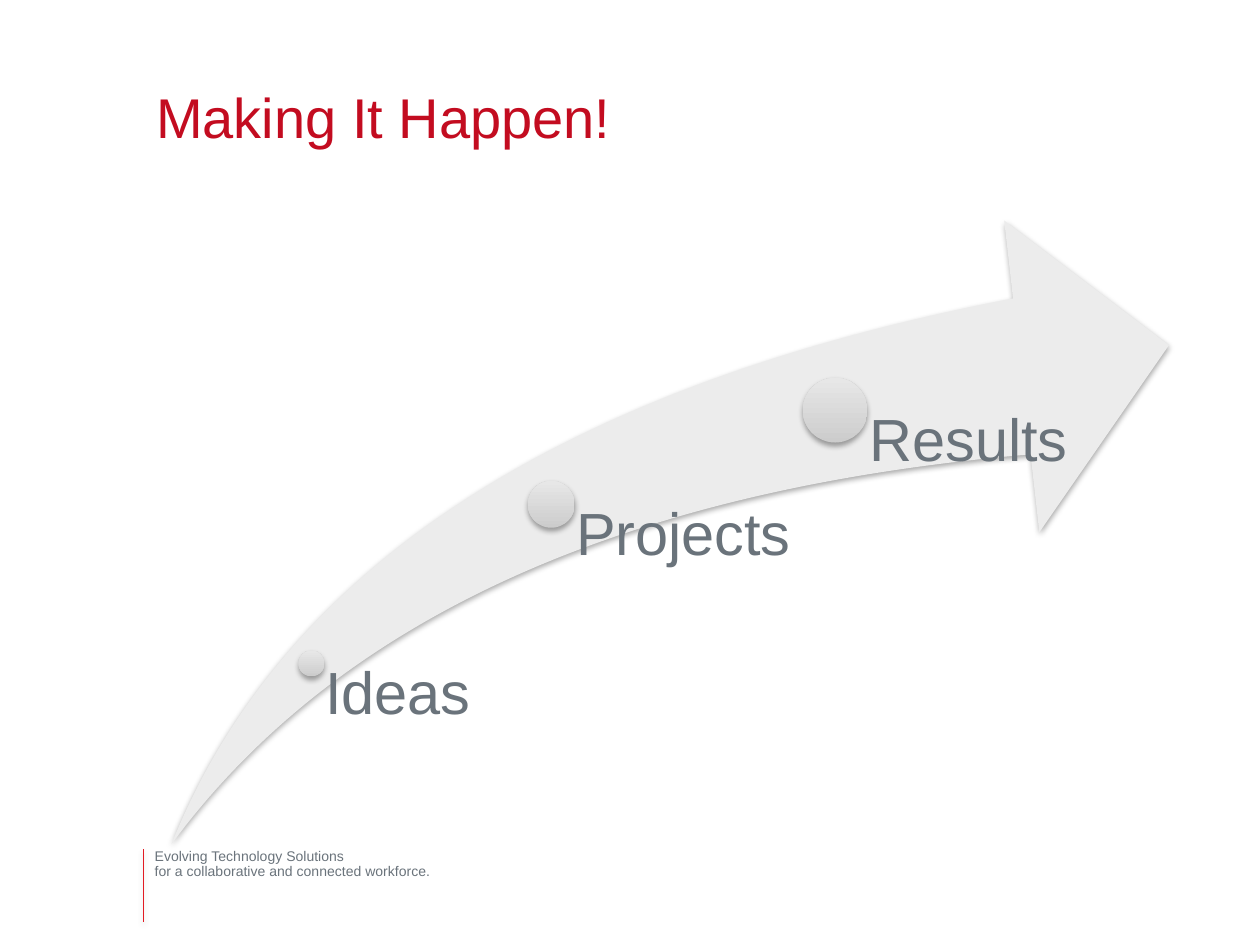
from lxml import etree
from pptx import Presentation
from pptx import util as u
from pptx.dml.color import RGBColor
from pptx.enum import shapes, text
from pptx.oxml import ns

RED = RGBColor(0xC3, 0x0C, 0x20)
RULE_RED = RGBColor(0xE3, 0x1B, 0x23)
SLATE = RGBColor(0x6A, 0x73, 0x7B)
PALE = RGBColor(0xEC, 0xEC, 0xEC)
DOT_DARK = RGBColor(0xCC, 0xCC, 0xCC)
DOT_LIGHT = RGBColor(0xE7, 0xE7, 0xE7)
FONT = "Arial"
ARROW_BOTTOM = 482.4

MILESTONES = [
    ("Ideas", 178, 379.2, 14.8, 133),
    ("Projects", 315, 288.2, 26.8, 137),
    ("Results", 477.2, 234.4, 37, 137),
]


def place(item, left, top, width, height):
    item.left, item.top = u.Pt(left), u.Pt(top)
    item.width, item.height = u.Pt(width), u.Pt(height)


def format_text(frame, size, colour, spacing=None):
    for para in frame.paragraphs:
        para.alignment = text.PP_ALIGN.LEFT
        para.line_spacing = spacing
        for span in para.runs:
            span.font.name = FONT
            span.font.size = u.Pt(size)
            span.font.color.rgb = colour


def add_shadow(item, distance, opacity):
    effects = etree.SubElement(item._element.spPr, ns.qn("a:effectLst"))
    shadow = etree.SubElement(
        effects, ns.qn("a:outerShdw"), blurRad=str(u.Pt(3.1)),
        dist=str(u.Pt(distance)), dir="5400000", rotWithShape="0")
    colour = etree.SubElement(shadow, ns.qn("a:srgbClr"), val="000000")
    etree.SubElement(colour, ns.qn("a:alpha"), val=str(opacity * 1000))


def add_title(page, wording):
    title = page.shapes.title
    place(title, 82, 21.6, 603, 90)
    title.text_frame.text = wording
    title.text_frame.vertical_anchor = text.MSO_ANCHOR.MIDDLE
    format_text(title.text_frame, 32, RED)


def add_text(page, wording, bounds, size, inset=0, wrap=True):
    box = page.shapes.add_textbox(*map(u.Pt, bounds))
    frame = box.text_frame
    frame.word_wrap = wrap
    frame.margin_left = u.Pt(inset)
    frame.margin_top = frame.margin_right = frame.margin_bottom = 0
    frame.text = wording
    format_text(frame, size, SLATE, 0.9)


def add_rule(page, left, top, bottom):
    rule = page.shapes.add_connector(
        shapes.MSO_CONNECTOR.STRAIGHT,
        u.Pt(left), u.Pt(top), u.Pt(left), u.Pt(bottom))
    rule.line.color.rgb = RULE_RED
    rule.line.width = u.Pt(0.25)
    add_shadow(rule, 1.6, 38)


def add_arrow(page):
    arrow = page.shapes.add_shape(
        shapes.MSO_SHAPE.SWOOSH_ARROW, *map(u.Pt, (98, 126, 570, 356.4)))
    arrow.adjustments[0] = arrow.adjustments[1] = 0.25
    arrow.fill.solid()
    arrow.fill.fore_color.rgb = PALE
    arrow.line.fill.background()
    add_shadow(arrow, 1.8, 35)


def add_milestone(page, label, centre_x, centre_y, diameter, width):
    radius = diameter / 2
    dot = page.shapes.add_shape(
        shapes.MSO_SHAPE.OVAL, u.Pt(centre_x - radius),
        u.Pt(centre_y - radius), u.Pt(diameter), u.Pt(diameter))
    dot.fill.gradient()
    dot.fill.gradient_angle = 90
    for stop, colour, position in zip(
            dot.fill.gradient_stops, (DOT_DARK, DOT_LIGHT), (0, 1)):
        stop.color.rgb = colour
        stop.position = position
    dot.line.fill.background()
    add_shadow(dot, 1.8, 35)
    bounds = (centre_x, centre_y, width, ARROW_BOTTOM - centre_y)
    add_text(page, label, bounds, 34, inset=diameter * 0.53)


def main():
    deck = Presentation()
    deck.slide_width, deck.slide_height = u.Pt(720), u.Pt(540)
    page = deck.slides.add_slide(deck.slide_layouts[5])
    add_title(page, "Making It Happen!")
    add_text(page, "Evolving Technology Solutions\n"
             "for a collaborative and connected workforce.",
             (88.4, 485.3, 204.5, 17.3), 8, wrap=False)
    add_rule(page, 82, 485.3, 527)
    add_arrow(page)
    for milestone in MILESTONES:
        add_milestone(page, *milestone)
    deck.save("out.pptx")


if __name__ == "__main__":
    main()
